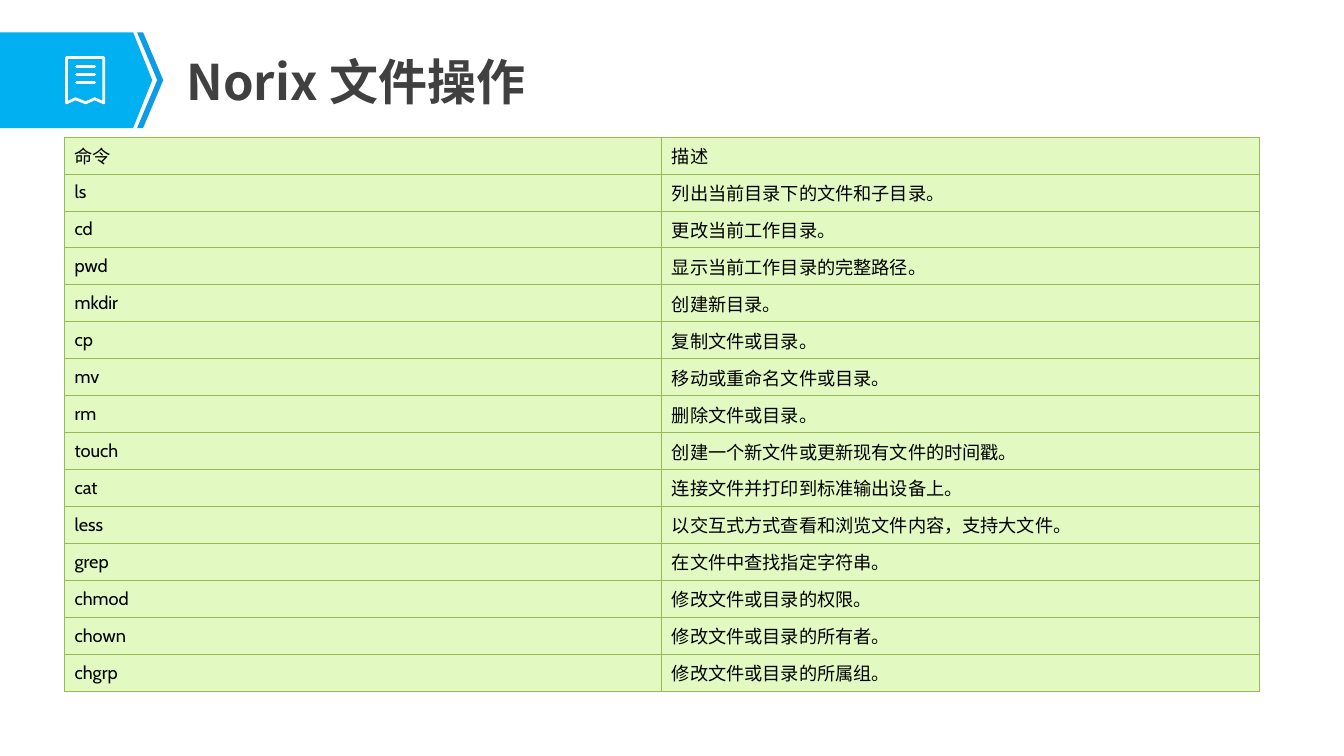
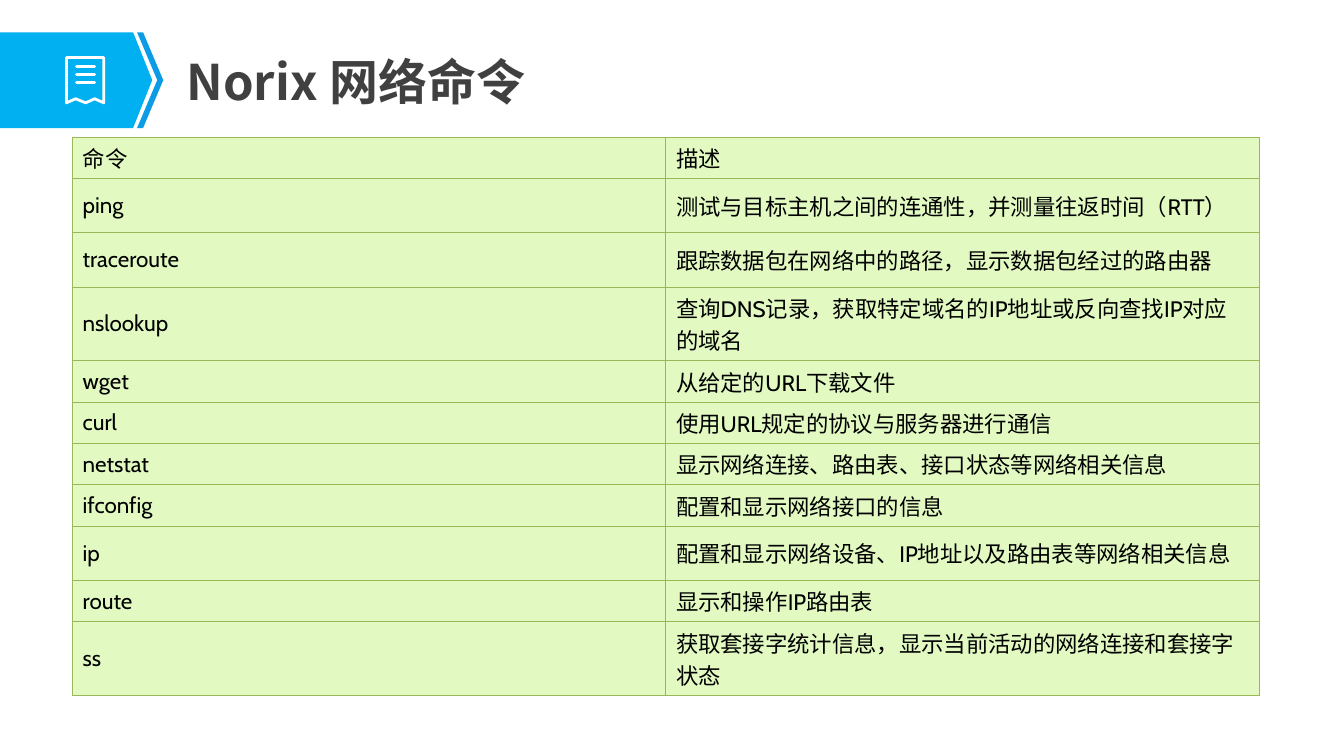
from lxml import etree
from pptx import Presentation
from pptx.dml.color import RGBColor
from pptx.enum import shapes, text
from pptx.oxml import ns
from pptx.util import Inches, Pt

FILES = [
    ("命令", "描述"),
    ("ls", "列出当前目录下的文件和子目录。"),
    ("cd", "更改当前工作目录。"),
    ("pwd", "显示当前工作目录的完整路径。"),
    ("mkdir", "创建新目录。"),
    ("cp", "复制文件或目录。"),
    ("mv", "移动或重命名文件或目录。"),
    ("rm", "删除文件或目录。"),
    ("touch", "创建一个新文件或更新现有文件的时间戳。"),
    ("cat", "连接文件并打印到标准输出设备上。"),
    ("less", "以交互式方式查看和浏览文件内容，支持大文件。"),
    ("grep", "在文件中查找指定字符串。"),
    ("chmod", "修改文件或目录的权限。"),
    ("chown", "修改文件或目录的所有者。"),
    ("chgrp", "修改文件或目录的所属组。"),
]
NETWORK = [
    ("命令", "描述"),
    ("ping", "测试与目标主机之间的连通性，并测量往返时间（RTT）"),
    ("traceroute", "跟踪数据包在网络中的路径，显示数据包经过的路由器"),
    ("nslookup", "查询DNS记录，获取特定域名的IP地址或反向查找IP对应的域名"),
    ("wget", "从给定的URL下载文件"),
    ("curl", "使用URL规定的协议与服务器进行通信"),
    ("netstat", "显示网络连接、路由表、接口状态等网络相关信息"),
    ("ifconfig", "配置和显示网络接口的信息"),
    ("ip", "配置和显示网络设备、IP地址以及路由表等网络相关信息"),
    ("route", "显示和操作IP路由表"),
    ("ss", "获取套接字统计信息，显示当前活动的网络连接和套接字状态"),
]
LOW, MID, HIGH = 0.41, 0.54, 0.73


def rgb(code):
    return RGBColor.from_string(code)


class Deck:
    """Hold the shared style and the current slide."""

    sky, blue, white = "00B0F0", "0B9CE5", "FFFFFF"
    gray, black = "404040", "000000"
    lime, olive = "E2FAC2", "98B955"
    latin, han = "Cabin", "Noto Sans CJK SC"

    def __init__(self):
        self.prs = Presentation()
        self.prs.slide_width = Inches(13.33)
        self.prs.slide_height = Inches(7.5)
        self.slide = None

    def page(self, title):
        self.slide = self.prs.slides.add_slide(self.prs.slide_layouts[5])
        self.shape(shapes.MSO_SHAPE.PENTAGON, 0, 1.51, 0.2, self.sky)
        self.shape(shapes.MSO_SHAPE.CHEVRON, 1.36, 0.26, 0.77, self.blue)
        self.icon()
        self.title(title)

    def shape(self, kind, left, width, point, color):
        item = self.slide.shapes.add_shape(
            kind, Inches(left), Inches(0.32), Inches(width), Inches(0.95))
        item.adjustments[0] = point
        item.shadow.inherit = False
        item.fill.solid()
        item.fill.fore_color.rgb = rgb(color)
        item.line.fill.background()

    def icon(self):
        edge = [(1.03, 0.57), (1.03, 1.02), (0.94, 0.98), (0.85, 1.02),
                (0.75, 0.98), (0.66, 1.02)]
        pen = self.slide.shapes.build_freeform(
            Inches(0.66), Inches(0.57))
        pen.add_line_segments([(Inches(x), Inches(y)) for x, y in edge])
        sheet = pen.convert_to_shape()
        sheet.shadow.inherit = False
        sheet.fill.background()
        self.stroke(sheet)
        for y in (0.66, 0.74, 0.82):
            self.rule(0.76, 0.94, y)

    def rule(self, left, right, y):
        line = self.slide.shapes.add_connector(
            shapes.MSO_CONNECTOR.STRAIGHT,
            Inches(left), Inches(y), Inches(right), Inches(y))
        self.stroke(line)
        line.line._ln.set("cap", "rnd")
        etree.SubElement(line._element.spPr, ns.qn("a:effectLst"))

    def stroke(self, item):
        item.line.color.rgb = rgb(self.white)
        item.line.width = Pt(2)

    def font(self, para, size, color, name, bold=False):
        font = para.font
        font.size, font.bold, font.name = Pt(size), bold, name
        font.color.rgb = rgb(color)
        props = para._p.pPr.find(ns.qn("a:defRPr"))
        etree.SubElement(props, ns.qn("a:ea"), typeface=self.han)

    def title(self, words):
        item = self.slide.shapes.title
        item.left, item.top = Inches(1.74), Inches(0.45)
        item.width, item.height = Inches(10.75), Inches(0.7)
        frame = item.text_frame
        frame.text = words
        frame.auto_size = text.MSO_AUTO_SIZE.NONE
        frame.vertical_anchor = text.MSO_ANCHOR.MIDDLE
        frame.margin_left = frame.margin_right = Inches(0.11)
        frame.margin_top = frame.margin_bottom = Inches(0.06)
        para = frame.paragraphs[0]
        para.alignment = text.PP_ALIGN.LEFT
        self.font(para, 35, self.gray, self.han, True)

    def table(self, rows, left, width, highs, size):
        grid = self.slide.shapes.add_table(
            len(rows), 2, Inches(left), Inches(1.36),
            Inches(width), Inches(sum(highs))).table
        grid.first_row = grid.horz_banding = False
        for row, high, words in zip(grid.rows, highs, rows):
            row.height = Inches(high)
            for cell, word in zip(row.cells, words):
                self.cell(cell, word, size)

    def cell(self, cell, word, size):
        cell.text = word
        cell.vertical_anchor = text.MSO_ANCHOR.MIDDLE
        cell.margin_left = cell.margin_right = Inches(0.1)
        cell.margin_top = cell.margin_bottom = Inches(0.04)
        self.font(cell.text_frame.paragraphs[0], size, self.black, self.latin)
        props = cell._tc.get_or_add_tcPr()
        for side in "LRTB":
            line = etree.SubElement(
                props, ns.qn(f"a:ln{side}"), w=str(Pt(0.75)))
            fill = etree.SubElement(line, ns.qn("a:solidFill"))
            etree.SubElement(fill, ns.qn("a:srgbClr"), val=self.olive)
        cell.fill.solid()
        cell.fill.fore_color.rgb = rgb(self.lime)


def main():
    deck = Deck()
    deck.page("Norix 文件操作")
    deck.table(FILES, 0.64, 11.85, [5.5 / len(FILES)] * len(FILES), 13)
    deck.page("Norix 网络命令")
    highs = [LOW, MID, MID, HIGH, LOW, LOW, LOW, LOW, MID, LOW, HIGH]
    deck.table(NETWORK, 0.72, 11.77, highs, 16)
    deck.prs.save("out.pptx")


if __name__ == "__main__":
    main()
